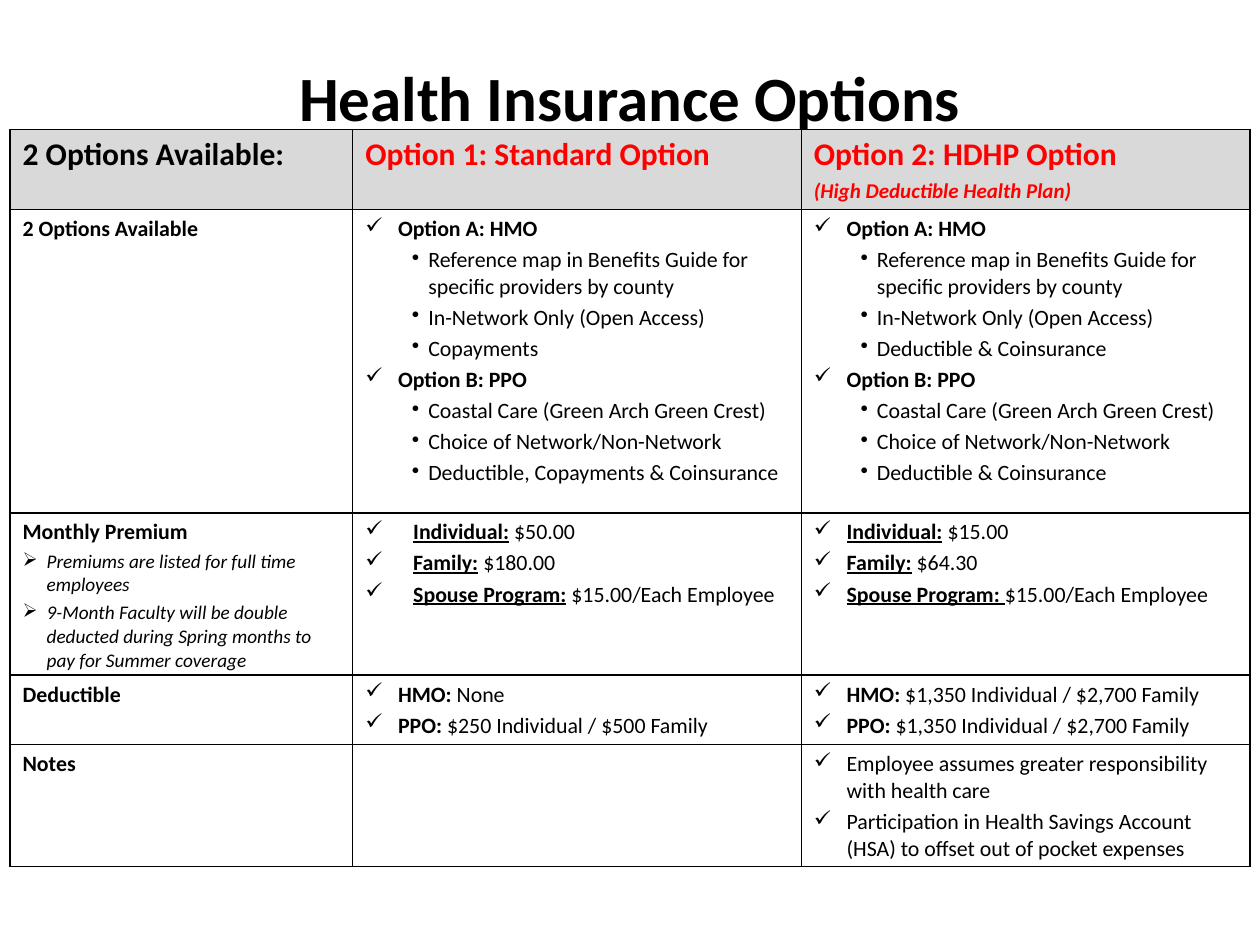
import pptx
import pptx.dml.color
import pptx.enum.text
import pptx.oxml.ns
import pptx.util
from lxml import etree

BLACK = pptx.dml.color.RGBColor(0x00, 0x00, 0x00)
RED = pptx.dml.color.RGBColor(0xFF, 0x00, 0x00)
GREY = pptx.dml.color.RGBColor(0xD9, 0xD9, 0xD9)
FONT = "Calibri"
BODY, SMALL = 12.5, 11
WIDTH, HEIGHT = pptx.util.Inches(10), pptx.util.Inches(7.5)
TITLE_BOX = (0, 0.067, 1, 0.07)
TABLE_BOX = (0.008, 0.137, 0.984, 0.697)
COLUMN_SHARES = (2.72, 3.56, 3.56)
ROW_SHARES = (0.5, 2.41, 0.99, 0.51, 0.82)
BULLETS = {
    "check": ("✓", 0.26, 0.26, 0),
    "wide check": ("✓", 0.38, 0.38, 0),
    "dot": ("•", 0.5, 0.13, 1),
    "arrow": ("➢", 0.19, 0.19, 0),
}


def line(*runs, bullet=None, size=BODY, color=BLACK):
    return {"runs": runs, "bullet": bullet, "size": size, "color": color}


def heading(text, color=BLACK):
    return line((text, "b"), size=18, color=color)


def label(text):
    return line((text, "b"))


def plans(hmo_cost, ppo_cost):
    groups = (
        ("Option A: HMO", (
            "Reference map in Benefits Guide for specific providers by county",
            "In-Network Only (Open Access)", hmo_cost)),
        ("Option B: PPO", (
            "Coastal Care (Green Arch Green Crest)",
            "Choice of Network/Non-Network", ppo_cost)),
    )
    lines = []
    for name, details in groups:
        lines.append(line((name, "b"), bullet="check"))
        lines += [line((detail, ""), bullet="dot") for detail in details]
    return lines


def premiums(individual, family, bullet):
    amounts = (("Individual:", individual), ("Family:", family))
    return [line((name, "bu"), (" ", "b"), (amount, ""), bullet=bullet) for name, amount in amounts]


def deductibles(hmo, ppo):
    return [line((name, "b"), (amount, ""), bullet="check")
            for name, amount in (("HMO: ", hmo), ("PPO: ", ppo))]


def checks(*texts):
    return [line((text, ""), bullet="check") for text in texts]


SPOUSE_AMOUNT = ("$15.00/Each Employee", "")
HDHP_DEDUCTIBLE = "$1,350 Individual / $2,700 Family"
ROWS = (
    ([heading("2 Options Available:")],
     [heading("Option 1: Standard Option", RED)],
     [heading("Option 2: HDHP Option", RED),
      line(("(High Deductible Health Plan)", "bi"), size=12, color=RED)]),
    ([label("2 Options Available")],
     plans("Copayments", "Deductible, Copayments & Coinsurance"),
     plans("Deductible & Coinsurance", "Deductible & Coinsurance")),
    ([label("Monthly Premium"),
      line(("Premiums are listed for full time employees", "i"), bullet="arrow", size=SMALL),
      line(("9-Month Faculty will be double deducted during Spring months to pay for Summer coverage", "i"),
           bullet="arrow", size=SMALL)],
     premiums("$50.00", "$180.00", "wide check")
     + [line(("Spouse Program:", "bu"), (" ", "b"), SPOUSE_AMOUNT, bullet="wide check")],
     premiums("$15.00", "$64.30", "check")
     + [line(("Spouse Program: ", "bu"), SPOUSE_AMOUNT, bullet="check")]),
    ([label("Deductible")],
     deductibles("None", "$250 Individual / $500 Family"),
     deductibles(HDHP_DEDUCTIBLE, HDHP_DEDUCTIBLE)),
    ([label("Notes")],
     [],
     checks("Employee assumes greater responsibility with health care",
            "Participation in Health Savings Account (HSA) to offset out of pocket expenses")),
)


def place(box):
    left, top, width, height = box
    return [round(length) for length in (left * WIDTH, top * HEIGHT, width * WIDTH, height * HEIGHT)]


def add_bullet(paragraph, name):
    character, margin, hanging, level = BULLETS[name]
    paragraph.level = level
    properties = paragraph._p.get_or_add_pPr()
    properties.set("marL", str(pptx.util.Inches(margin)))
    properties.set("indent", str(-pptx.util.Inches(hanging)))
    etree.SubElement(properties, pptx.oxml.ns.qn("a:buChar")).set("char", character)


def add_run(paragraph, text, style, size, color):
    run = paragraph.add_run()
    run.text = text
    font = run.font
    font.name = FONT
    font.size = pptx.util.Pt(size)
    font.color.rgb = color
    font.bold = "b" in style
    font.italic = "i" in style
    font.underline = "u" in style


def fill_text(text_frame, lines):
    for index, entry in enumerate(lines):
        paragraph = text_frame.add_paragraph() if index else text_frame.paragraphs[0]
        if entry["bullet"]:
            add_bullet(paragraph, entry["bullet"])
        if index:
            paragraph.space_before = pptx.util.Pt(0.2 * entry["size"])
        for text, style in entry["runs"]:
            add_run(paragraph, text, style, entry["size"], entry["color"])


def set_borders(cell):
    properties = cell._tc.get_or_add_tcPr()
    for position, side in enumerate(("a:lnL", "a:lnR", "a:lnT", "a:lnB")):
        border = etree.Element(pptx.oxml.ns.qn(side), w=str(pptx.util.Pt(1)))
        fill = etree.SubElement(border, pptx.oxml.ns.qn("a:solidFill"))
        etree.SubElement(fill, pptx.oxml.ns.qn("a:srgbClr")).set("val", str(BLACK))
        properties.insert(position, border)


def add_title(slide, box):
    text_frame = slide.shapes.add_textbox(*place(box)).text_frame
    text_frame.word_wrap = True
    text_frame.vertical_anchor = pptx.enum.text.MSO_ANCHOR.MIDDLE
    fill_text(text_frame, [line(("Health Insurance Options", "b"), size=36)])
    text_frame.paragraphs[0].alignment = pptx.enum.text.PP_ALIGN.CENTER


def add_options_table(slide, box):
    left, top, width, height = place(box)
    table = slide.shapes.add_table(len(ROWS), len(COLUMN_SHARES), left, top, width, height).table
    table.first_row = False
    table.horz_banding = False
    for column, share in zip(table.columns, COLUMN_SHARES):
        column.width = round(width * share / sum(COLUMN_SHARES))
    for row, share in zip(table.rows, ROW_SHARES):
        row.height = round(height * share / sum(ROW_SHARES))
    for row_index, row in enumerate(ROWS):
        for column_index, lines in enumerate(row):
            cell = table.cell(row_index, column_index)
            if row_index == 0:
                cell.fill.solid()
                cell.fill.fore_color.rgb = GREY
            else:
                cell.fill.background()
            set_borders(cell)
            fill_text(cell.text_frame, lines)


def main():
    presentation = pptx.Presentation()
    presentation.slide_width = WIDTH
    presentation.slide_height = HEIGHT
    slide = presentation.slides.add_slide(presentation.slide_layouts[6])
    add_title(slide, TITLE_BOX)
    add_options_table(slide, TABLE_BOX)
    presentation.save("out.pptx")


if __name__ == "__main__":
    main()
